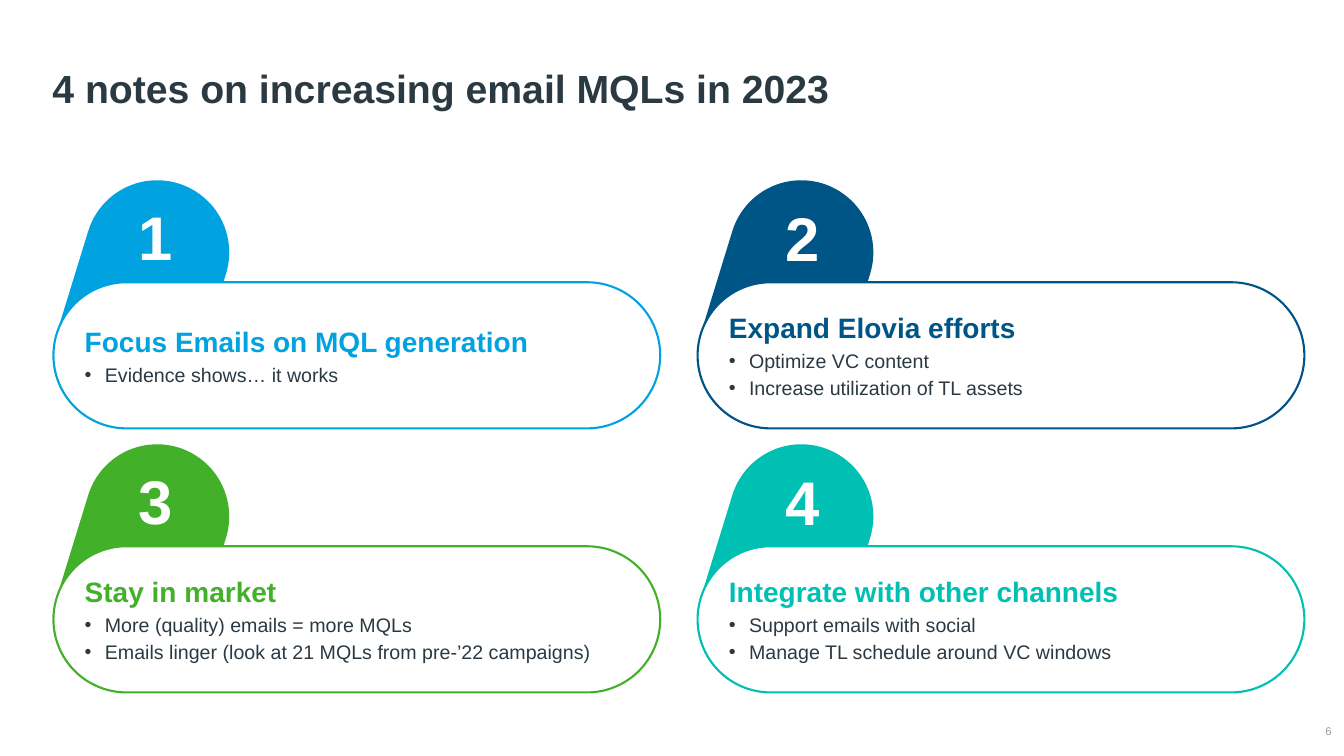
from pptx import Presentation
from pptx.dml.color import RGBColor
from pptx.enum.shapes import MSO_SHAPE
from pptx.enum.text import MSO_ANCHOR, MSO_AUTO_SIZE, PP_ALIGN
from pptx.oxml.ns import qn
from pptx.util import Pt
from lxml.etree import SubElement

INK = RGBColor(0x2B, 0x3A, 0x42)
GRAY = RGBColor(0x95, 0x9C, 0xA0)
WHITE = RGBColor(0xFF, 0xFF, 0xFF)
SKY = RGBColor(0x00, 0xA3, 0xE0)
NAVY = RGBColor(0x00, 0x55, 0x87)
GREEN = RGBColor(0x43, 0xB0, 0x2A)
TEAL = RGBColor(0x00, 0xBF, 0xB3)

# Card grid: first corner and steps, in points
LEFT, TOP = 38.16, 128.16
STEP_X, STEP_Y = 460.1, 188.6

NOTES = [
    (SKY, "Focus Emails on MQL generation", ["Evidence shows… it works"]),
    (NAVY, "Expand Elovia efforts",
     ["Optimize VC content", "Increase utilization of TL assets"]),
    (GREEN, "Stay in market",
     ["More (quality) emails = more MQLs",
      "Emails linger (look at 21 MQLs from pre-’22 campaigns)"]),
    (TEAL, "Integrate with other channels",
     ["Support emails with social", "Manage TL schedule around VC windows"]),
]


def put(item, **values):
    for name, value in values.items():
        setattr(item, name, value)


def style(para, size, color, bold=False):
    put(para.font, name="Arial", size=Pt(size), bold=bold)
    para.font.color.rgb = color


def add_pill(shapes, box, fill, line, width):
    pill = shapes.add_shape(MSO_SHAPE.ROUNDED_RECTANGLE, *map(Pt, box))
    pill.adjustments[0] = 0.5
    pill.shadow.inherit = False
    pill.fill.solid()
    pill.fill.fore_color.rgb = fill
    pill.line.color.rgb = line
    pill.line.width = Pt(width)
    return pill


def add_label(shapes, box, text, size, color, bold=False,
              align=PP_ALIGN.LEFT, **frame):
    label = shapes.add_textbox(*map(Pt, box)).text_frame
    put(label, **frame)
    para = label.paragraphs[0]
    put(para, text=text, alignment=align)
    style(para, size, color, bold)


def add_bullet(para):
    props = para._p.get_or_add_pPr()
    props.set("marL", str(Pt(14.4)))
    props.set("indent", str(Pt(-14.4)))
    SubElement(props, qn("a:buFont")).set("typeface", "Arial")
    SubElement(props, qn("a:buChar")).set("char", "•")


def fill_note(frame, color, head, points):
    put(frame, word_wrap=True, vertical_anchor=MSO_ANCHOR.MIDDLE)
    for i, text in enumerate([head, *points]):
        para = frame.add_paragraph() if i else frame.paragraphs[0]
        put(para, text=text, alignment=PP_ALIGN.LEFT, space_after=Pt(3))
        if i:
            add_bullet(para)
            style(para, 14, INK)
        else:
            style(para, 20, color, True)


def add_card(slide, index, color, head, points):
    row, col = divmod(index, 2)
    x, y = LEFT + col * STEP_X, TOP + row * STEP_Y
    shapes = slide.shapes.add_group_shape().shapes
    # Slanted tab behind the note
    tab = add_pill(shapes, (x + 12.24, y, 100.8, 178.56), color, color, 2.25)
    tab.rotation = 17.1
    # Note
    note = add_pill(shapes, (x, y + 73.44, 433.44, 104.4), WHITE, color, 1.5)
    fill_note(note.text_frame, color, head, points)
    # Number, set slightly further in on the right column
    add_label(shapes, (x + 56.9 + 2 * col, y + 10.4 + col, 28.1, 60.5),
              str(index + 1), 44, WHITE, True, word_wrap=False,
              margin_left=Pt(3.6), margin_right=0,
              margin_top=Pt(3.6), margin_bottom=Pt(3.6))


def add_title(slide, text):
    title = slide.shapes.title
    put(title, left=Pt(30.24), top=Pt(23), width=Pt(892.8), height=Pt(60.5))
    put(title.text_frame, text=text, word_wrap=True,
        auto_size=MSO_AUTO_SIZE.NONE, vertical_anchor=MSO_ANCHOR.BOTTOM)
    para = title.text_frame.paragraphs[0]
    put(para, alignment=PP_ALIGN.LEFT, line_spacing=0.9)
    style(para, 28, INK, True)


def main():
    deck = Presentation()
    put(deck, slide_width=Pt(960), slide_height=Pt(540))
    slide = deck.slides.add_slide(deck.slide_layouts[5])
    add_title(slide, "4 notes on increasing email MQLs in 2023")
    for index, note in enumerate(NOTES):
        add_card(slide, index, *note)
    # Page number
    add_label(slide.shapes, (923, 515.5, 28.1, 13.7), "6", 8, GRAY,
              align=PP_ALIGN.RIGHT, word_wrap=True,
              vertical_anchor=MSO_ANCHOR.MIDDLE, margin_left=0,
              margin_right=0, margin_top=0, margin_bottom=0)
    deck.save("out.pptx")


if __name__ == "__main__":
    main()
